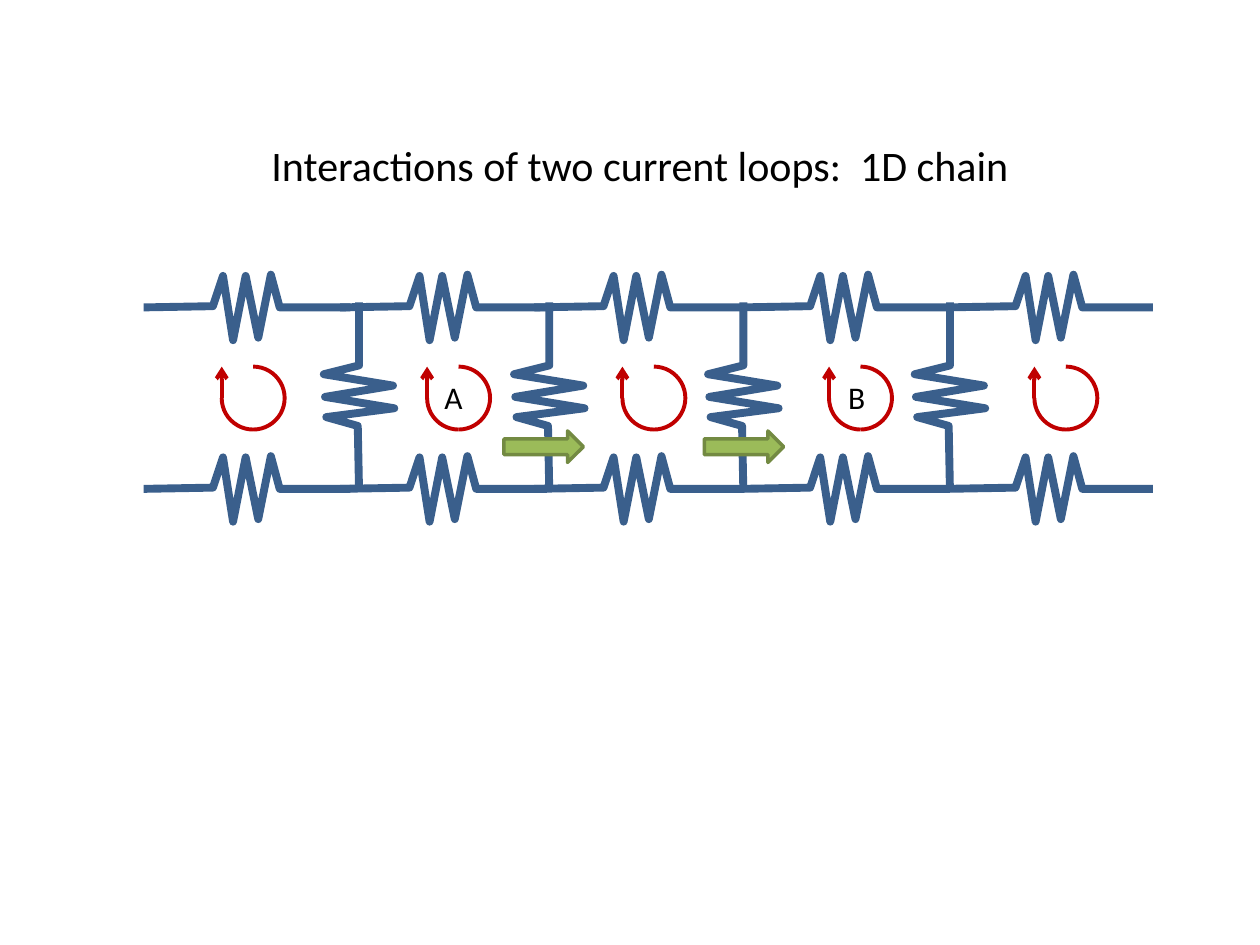
"""Build a slide of a resistor chain with interacting current loops."""
from dataclasses import dataclass
from typing import Any, Optional

import lxml.etree
import pptx
import pptx.dml.color
import pptx.enum.shapes
import pptx.enum.text
import pptx.oxml.ns
import pptx.util

COLUMNS = 1000
UNIT = pptx.util.Inches(10) // COLUMNS
RAILS = (218, 362)
RUNG_TOP = 287
LOOP_TOP, LOOP_SIZE = 291, 50
RAIL_RESISTOR = ((164, 26), (108, 26), (101, 0), (91, 50), (81, 1),
                 (71, 52), (63, 1), (55, 25), (0, 26))
RUNG_RESISTOR = ((150, 28), (100, 28), (93, 0), (84, 55), (75, 1),
                 (66, 56), (59, 2), (52, 27), (0, 28))
WIRE, LOOP, BLACK = "3A5F8C", "C00000", "000000"


@dataclass(frozen=True)
class Cell:
    """One mesh of the chain, in grid columns."""
    left: int
    loop: int
    rung: Optional[int] = None


@dataclass(frozen=True)
class Label:
    """A letter naming a loop, in grid columns."""
    text: str
    left: int


CELLS = (Cell(114, 176, 210), Cell(270, 339, 361), Cell(424, 494, 515),
         Cell(588, 658, 679), Cell(751, 821))
LABELS = (Label("A", 340), Label("B", 660))
ARROWS = (419, 578)


def grid(*cells: int) -> list[int]:
    """Turn grid cells into lengths."""
    return [pptx.util.Emu(c * UNIT) for c in cells]


def color(hex_value: str) -> pptx.dml.color.RGBColor:
    """Turn a hex string into a colour."""
    return pptx.dml.color.RGBColor.from_string(hex_value)


def set_line(sp: Any, hex_value: str, width: float) -> None:
    """Set the colour and width of an outline."""
    sp.line.color.rgb = color(hex_value)
    sp.line.width = pptx.util.Pt(width)


def add_resistor(shapes: Any, left: int, top: int, points: tuple, rotation: int = 0) -> None:
    """Draw a zigzag resistor with its leads."""
    (x, y), *rest = [(left + dx, top + dy) for dx, dy in points]
    builder = shapes.build_freeform(x, y, scale=float(UNIT))
    builder.add_line_segments(rest, close=False)
    sp = builder.convert_to_shape()
    sp.fill.background()
    sp.shadow.inherit = False
    set_line(sp, WIRE, 4.5)
    sp.rotation = rotation


def add_loop(shapes: Any, left: int) -> None:
    """Draw a clockwise current loop of three arcs and an arrow."""
    for flips in ((), ("flipV",), ("flipH", "flipV")):
        sp = shapes.add_shape(pptx.enum.shapes.MSO_SHAPE.ARC,
                              *grid(left, LOOP_TOP, LOOP_SIZE, LOOP_SIZE))
        sp.fill.background()
        sp.shadow.inherit = False
        set_line(sp, LOOP, 2.25)
        for flip in flips:
            sp._element.spPr.xfrm.set(flip, "1")
    line = shapes.add_connector(pptx.enum.shapes.MSO_CONNECTOR.STRAIGHT,
                                *grid(left, LOOP_TOP + LOOP_SIZE // 2, left, LOOP_TOP))
    set_line(line, LOOP, 2.25)
    qn = pptx.oxml.ns.qn
    lxml.etree.SubElement(line.line._get_or_add_ln(), qn("a:tailEnd"), type="arrow")
    lxml.etree.SubElement(line._element.spPr, qn("a:effectLst"))


def add_arrow(shapes: Any, left: int) -> None:
    """Draw a block arrow turned to point right."""
    sp = shapes.add_shape(pptx.enum.shapes.MSO_SHAPE.DOWN_ARROW, *grid(left, 323, 25, 63))
    sp.rotation = 270
    sp.shadow.inherit = False
    sp.fill.solid()
    sp.fill.fore_color.rgb = color("9BBB59")
    set_line(sp, "738A42", 2)


def set_text(sp: Any, text: str, size: int) -> None:
    """Write one centred line of text."""
    tf = sp.text_frame
    tf.word_wrap = True
    tf.text = text
    p = tf.paragraphs[0]
    p.alignment = pptx.enum.text.PP_ALIGN.CENTER
    font = p.runs[0].font
    font.name, font.size = "Calibri", pptx.util.Pt(size)
    font.color.rgb = color(BLACK)


def add_title(s: Any, text: str) -> None:
    """Place and fill the title placeholder."""
    title = s.shapes.title
    title.left, title.top, title.width, title.height = grid(58, 88, 900, 85)
    set_text(title, text, 24)
    title.text_frame.vertical_anchor = pptx.enum.text.MSO_ANCHOR.MIDDLE


def main() -> None:
    """Build and save the slide."""
    prs = pptx.Presentation()
    prs.slide_width, prs.slide_height = grid(COLUMNS, 750)
    s = prs.slides.add_slide(prs.slide_layouts[5])
    add_title(s, "Interactions of two current loops:  1D chain")
    chain = s.shapes.add_group_shape().shapes
    for cell in CELLS:
        for rail in RAILS:
            add_resistor(chain, cell.left, rail, RAIL_RESISTOR)
        if cell.rung is not None:
            add_resistor(chain, cell.rung, RUNG_TOP, RUNG_RESISTOR, 270)
        add_loop(chain, cell.loop)
    for label in LABELS:
        set_text(s.shapes.add_textbox(*grid(label.left, 295, 40, 40)), label.text, 18)
    arrows = s.shapes.add_group_shape().shapes
    for left in ARROWS:
        add_arrow(arrows, left)
    prs.save("out.pptx")


if __name__ == "__main__":
    main()
